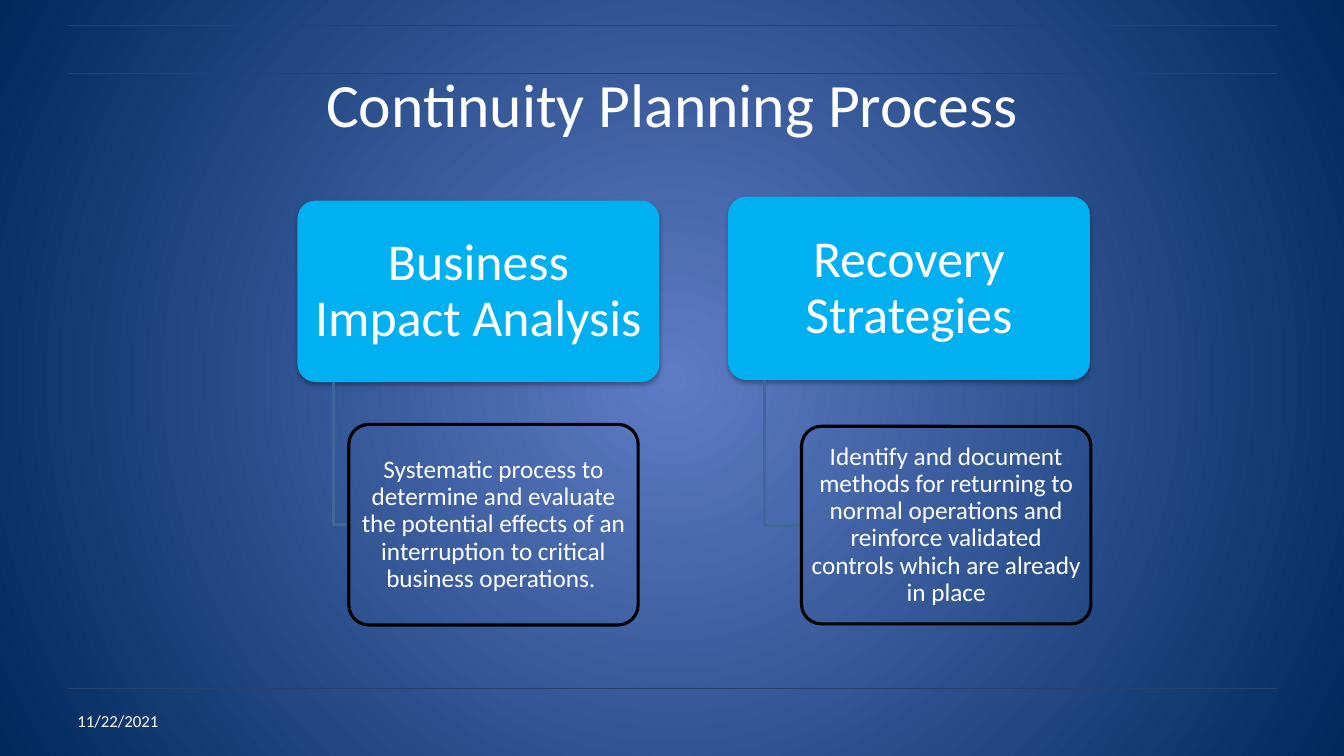
from dataclasses import dataclass

from lxml.etree import SubElement
from pptx import Presentation
from pptx.dml.color import RGBColor
from pptx.enum.shapes import MSO_CONNECTOR, MSO_SHAPE
from pptx.enum.text import MSO_ANCHOR, PP_ALIGN
from pptx.oxml.ns import qn
from pptx.shapes.autoshape import Shape
from pptx.slide import Slide
from pptx.text.text import TextFrame
from pptx.util import Inches, Pt

FONT = "Calibri"
WHITE = RGBColor(0xFF, 0xFF, 0xFF)
BLACK = RGBColor(0, 0, 0)
CENTRE_BLUE = RGBColor(0x5E, 0x7C, 0xC5)
EDGE_BLUE = RGBColor(0x00, 0x29, 0x5C)
RULE_BLUE = RGBColor(0x25, 0x41, 0x6E)
BRANCH_BLUE = RGBColor(0x3F, 0x67, 0x97)
CARD_BLUE = RGBColor(0x00, 0xB0, 0xF0)


@dataclass(frozen=True)
class Box:
    left: float
    top: float
    width: float
    height: float

    @property
    def bottom(self) -> float:
        return self.top + self.height

    @property
    def middle(self) -> float:
        return self.top + self.height / 2

    def inches(self) -> tuple[int, int, int, int]:
        return Inches(self.left), Inches(self.top), Inches(self.width), Inches(self.height)


@dataclass(frozen=True)
class TextRun:
    text: str
    size: float


@dataclass(frozen=True)
class Step:
    card: Box
    heading: TextRun
    detail: Box
    description: list[TextRun]


RULE_TOPS = (6.83, 0.25, 0.73)
STEPS = [
    Step(
        Box(2.95, 1.99, 3.59, 1.8),
        TextRun("Business Impact Analysis", 37),
        Box(3.46, 4.21, 2.87, 1.99),
        [
            TextRun("Systematic process to determine and evaluate the potential effects "
                    "of an interruption to critical business operations", 18),
            TextRun(". ", 17),
        ],
    ),
    Step(
        Box(7.22, 1.95, 3.59, 1.82),
        TextRun("Recovery Strategies", 37),
        Box(7.95, 4.23, 2.87, 1.96),
        [
            TextRun("Identify and document methods for returning to normal operations "
                    "and reinforce validated controls which are already in place", 18),
        ],
    ),
]


def set_background(s: Slide) -> None:
    """Fill the slide with a gradient spreading from its centre."""
    fill = s.background.fill
    fill.gradient()
    for stop, colour in zip(fill.gradient_stops, (CENTRE_BLUE, EDGE_BLUE)):
        stop.color.rgb = colour
    gradient = s._element.find(".//" + qn("a:gradFill"))
    gradient.remove(gradient.find(qn("a:lin")))
    circle = SubElement(gradient, qn("a:path"), path="circle")
    SubElement(circle, qn("a:fillToRect"), l="50000", t="50000", r="50000", b="50000")


def add_rule(s: Slide, top: float) -> None:
    rule = s.shapes.add_connector(
        MSO_CONNECTOR.STRAIGHT, Inches(0.67), Inches(top), Inches(12.67), Inches(top))
    rule.line.color.rgb = RULE_BLUE
    rule.line.width = Pt(0.75)
    SubElement(rule._element.spPr, qn("a:effectLst"))


def write(tf: TextFrame, runs: list[TextRun], align: PP_ALIGN, spacing: float = 1.0) -> None:
    tf.word_wrap = True
    tf.vertical_anchor = MSO_ANCHOR.MIDDLE
    p = tf.paragraphs[0]
    p.alignment = align
    p.line_spacing = spacing
    for run in runs:
        r = p.add_run()
        r.text = run.text
        r.font.name = FONT
        r.font.size = Pt(run.size)
        r.font.color.rgb = WHITE


def add_text(s: Slide, box: Box, run: TextRun, align: PP_ALIGN) -> None:
    write(s.shapes.add_textbox(*box.inches()).text_frame, [run], align)


def add_rounded(s: Slide, box: Box, runs: list[TextRun], inset_x: float, inset_y: float) -> Shape:
    sp = s.shapes.add_shape(MSO_SHAPE.ROUNDED_RECTANGLE, *box.inches())
    sp.adjustments[0] = 0.1
    sp.shadow.inherit = False
    tf = sp.text_frame
    tf.margin_left = tf.margin_right = Inches(inset_x)
    tf.margin_top = tf.margin_bottom = Inches(inset_y)
    write(tf, runs, PP_ALIGN.CENTER, 0.9)
    return sp


def add_card(s: Slide, box: Box, heading: TextRun) -> None:
    sp = add_rounded(s, box, [heading], 0.08, 0.05)
    sp.fill.solid()
    sp.fill.fore_color.rgb = CARD_BLUE
    sp.line.fill.background()
    effects = sp._element.spPr.find(qn("a:effectLst"))
    shadow = SubElement(effects, qn("a:outerShdw"), blurRad=str(Pt(3.5)), dist=str(Pt(2.2)),
                        dir="5400000", rotWithShape="0")
    colour = SubElement(shadow, qn("a:srgbClr"), val=str(BLACK))
    SubElement(colour, qn("a:alpha"), val="32000")


def add_detail(s: Slide, box: Box, description: list[TextRun]) -> None:
    sp = add_rounded(s, box, description, 0.04, 0.03)
    sp.fill.background()
    sp.line.color.rgb = BLACK
    sp.line.width = Pt(2.25)


def add_branch(s: Slide, card: Box, detail: Box) -> None:
    """Draw the elbow from a card's lower edge to the side of its detail box."""
    x = Inches(card.left + card.width / 10)
    y = Inches(detail.middle)
    builder = s.shapes.build_freeform(x, Inches(card.bottom))
    builder.add_line_segments([(x, y), (Inches(detail.left), y)], close=False)
    branch = builder.convert_to_shape()
    branch.shadow.inherit = False
    branch.fill.background()
    branch.line.color.rgb = BRANCH_BLUE
    branch.line.width = Pt(2)


def main() -> None:
    prs = Presentation()
    prs.slide_width, prs.slide_height = Inches(13.33), Inches(7.5)
    s = prs.slides.add_slide(prs.slide_layouts[6])
    set_background(s)
    for top in RULE_TOPS:
        add_rule(s, top)
    add_text(s, Box(0.67, 0.4, 12, 1.25), TextRun("Continuity Planning Process", 44),
             PP_ALIGN.CENTER)
    add_text(s, Box(0.67, 6.95, 3.11, 0.4), TextRun("11/22/2021", 12), PP_ALIGN.LEFT)
    for step in STEPS:
        add_card(s, step.card, step.heading)
        add_branch(s, step.card, step.detail)
        add_detail(s, step.detail, step.description)
    prs.save("out.pptx")


if __name__ == "__main__":
    main()
